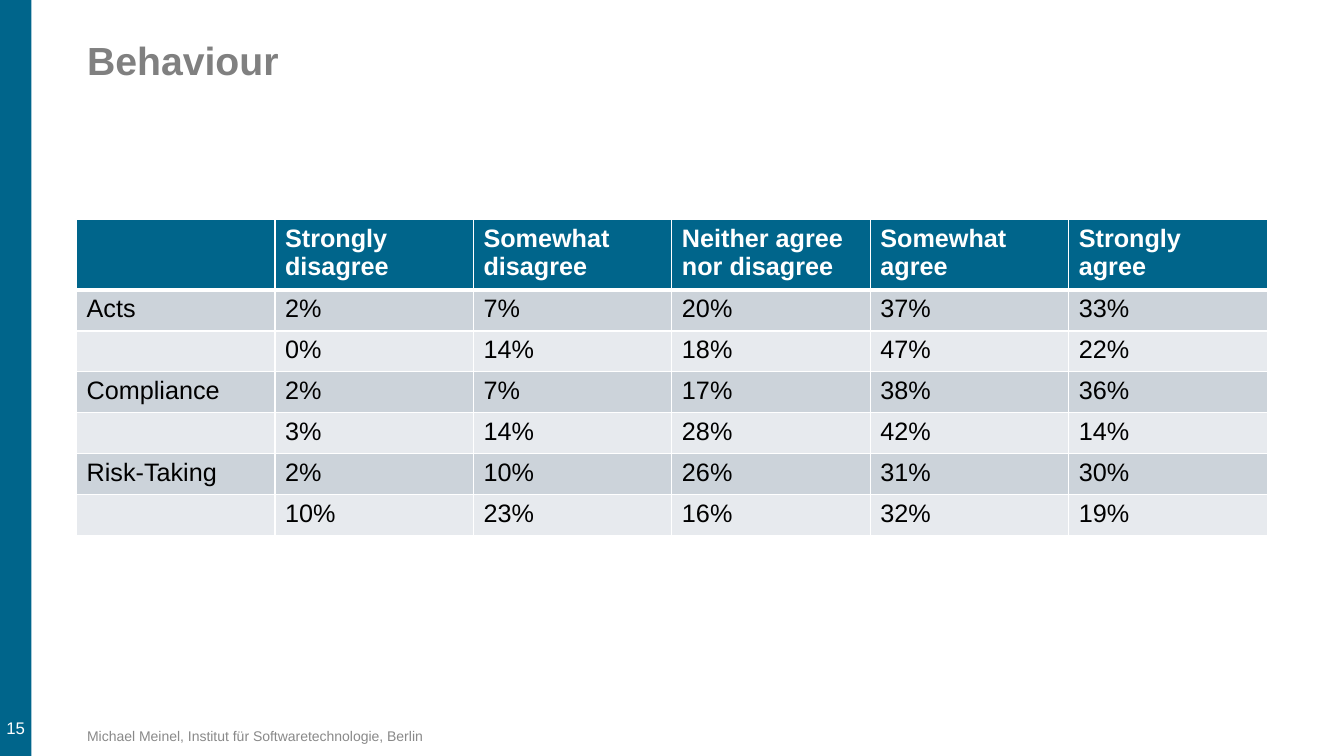
"""Build the Behaviour slide with its table of survey answers."""
import dataclasses

import lxml.etree
import pptx
import pptx.dml.color
import pptx.enum.shapes
import pptx.enum.text
import pptx.oxml.ns
import pptx.slide
import pptx.table
import pptx.text.text
import pptx.util

EMU_PER_PX = 9525
FONT = "Arial"
BLUE, WHITE, BLACK = "00658B", "FFFFFF", "000000"
BANDS = ("CCD3DA", "E7EAEE")
LEFT = 73
COLUMN_WIDTH, HEADER_HEIGHT, ROW_HEIGHT = 189, 62, 39
THIN, THICK = 1, 3

Anchor = pptx.enum.text.MSO_ANCHOR
Align = pptx.enum.text.PP_ALIGN

ANSWERS = [
    ("", "Strongly disagree", "Somewhat disagree", "Neither agree nor disagree",
     "Somewhat\nagree", "Strongly\vagree"),
    ("Acts", "2%", "7%", "20%", "37%", "33%"),
    ("", "0%", "14%", "18%", "47%", "22%"),
    ("Compliance", "2%", "7%", "17%", "38%", "36%"),
    ("", "3%", "14%", "28%", "42%", "14%"),
    ("Risk-Taking", "2%", "10%", "26%", "31%", "30%"),
    ("", "10%", "23%", "16%", "32%", "19%"),
]


@dataclasses.dataclass(frozen=True)
class Label:
    text: str
    left: int
    top: int
    width: int
    height: int
    size: int
    color: str
    bold: bool = False
    anchor: Anchor = Anchor.TOP
    align: Align = Align.LEFT
    side_inset: int = 10
    end_inset: int = 5
    wrap: bool = True
    line_spacing: float = 1.0


LABELS = [
    Label("15", 0, 561, 30, 151, 12, WHITE, anchor=Anchor.BOTTOM,
          align=Align.CENTER, side_inset=4, end_inset=10, wrap=False),
    Label("Michael Meinel, Institut für Softwaretechnologie, Berlin",
          LEFT, 687, 432, 27, 10, "898989", anchor=Anchor.MIDDLE),
    Label("Behaviour", LEFT, 35, 1056, 104, 28, "808080", bold=True, line_spacing=0.9),
]


def px(length: int) -> pptx.util.Emu:
    return pptx.util.Emu(length * EMU_PER_PX)


def rgb(value: str) -> pptx.dml.color.RGBColor:
    return pptx.dml.color.RGBColor.from_string(value)


def style_text(frame: pptx.text.text.TextFrame, size: int, color: str, bold: bool) -> None:
    for para in frame.paragraphs:
        para.font.size = pptx.util.Pt(size)
        for span in para.runs:
            span.font.name = FONT
            span.font.size = pptx.util.Pt(size)
            span.font.bold = bold
            span.font.color.rgb = rgb(color)


def add_sidebar(page: pptx.slide.Slide) -> None:
    bar = page.shapes.add_shape(
        pptx.enum.shapes.MSO_SHAPE.RECTANGLE, px(0), px(0), px(30), px(720))
    bar.shadow.inherit = False
    bar.fill.solid()
    bar.fill.fore_color.rgb = rgb(BLUE)
    bar.line.fill.background()


def add_label(page: pptx.slide.Slide, label: Label) -> None:
    box = page.shapes.add_textbox(
        px(label.left), px(label.top), px(label.width), px(label.height))
    frame = box.text_frame
    frame.text = label.text
    frame.word_wrap = label.wrap
    frame.vertical_anchor = label.anchor
    frame.margin_left = frame.margin_right = px(label.side_inset)
    frame.margin_top = frame.margin_bottom = px(label.end_inset)
    para = frame.paragraphs[0]
    para.alignment = label.align
    para.line_spacing = label.line_spacing
    style_text(frame, label.size, label.color, label.bold)


def add_borders(cell: pptx.table._Cell, top: int, bottom: int) -> None:
    qn = pptx.oxml.ns.qn
    properties = cell._tc.get_or_add_tcPr()
    for side, points in (("L", THIN), ("R", THIN), ("T", top), ("B", bottom)):
        line = lxml.etree.SubElement(
            properties, qn(f"a:ln{side}"), w=str(pptx.util.Pt(points)))
        fill = lxml.etree.SubElement(line, qn("a:solidFill"))
        lxml.etree.SubElement(fill, qn("a:srgbClr"), val=WHITE)


def add_answers(page: pptx.slide.Slide) -> None:
    row_count, column_count = len(ANSWERS), len(ANSWERS[0])
    height = HEADER_HEIGHT + (row_count - 1) * ROW_HEIGHT
    table = page.shapes.add_table(
        row_count, column_count, px(LEFT), px(209),
        px(column_count * COLUMN_WIDTH), px(height)).table
    for column in table.columns:
        column.width = px(COLUMN_WIDTH)
    for index, texts in enumerate(ANSWERS):
        header = index == 0
        table.rows[index].height = px(HEADER_HEIGHT if header else ROW_HEIGHT)
        for cell, text in zip(table.rows[index].cells, texts):
            cell.text_frame.text = text
            style_text(cell.text_frame, 18, WHITE if header else BLACK, header)
            add_borders(cell, THICK if index == 1 else THIN, THICK if header else THIN)
            cell.fill.solid()
            cell.fill.fore_color.rgb = rgb(BLUE if header else BANDS[(index - 1) % 2])


def main() -> None:
    deck = pptx.Presentation()
    deck.slide_width, deck.slide_height = px(1280), px(720)
    page = deck.slides.add_slide(deck.slide_layouts[6])
    add_sidebar(page)
    for label in LABELS:
        add_label(page, label)
    add_answers(page)
    deck.save("out.pptx")


if __name__ == "__main__":
    main()
